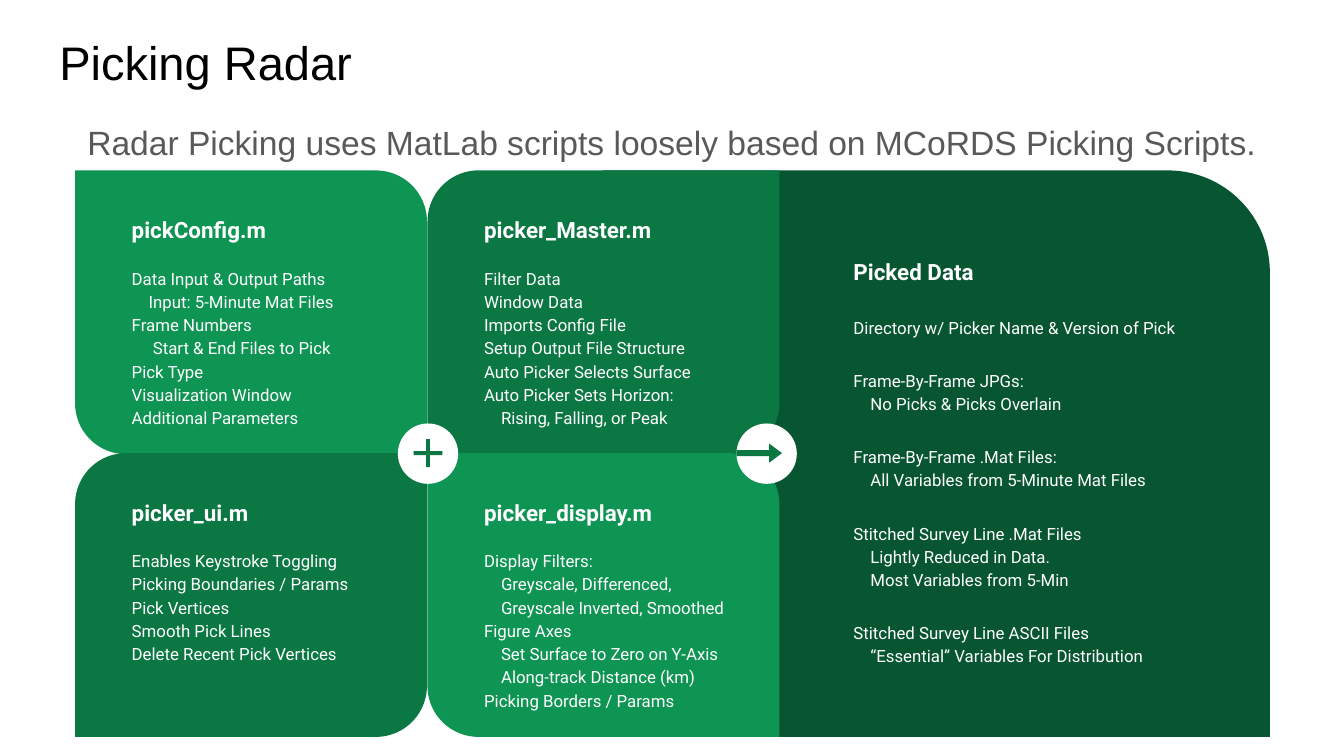
from pptx import Presentation
from pptx.dml.color import RGBColor
from pptx.enum.shapes import MSO_SHAPE
from pptx.enum.text import MSO_ANCHOR, MSO_AUTO_SIZE, PP_ALIGN
from pptx.util import Cm, Pt

WHITE = RGBColor(0xFF, 0xFF, 0xFF)
BLACK = RGBColor(0x00, 0x00, 0x00)
GREY = RGBColor(0x59, 0x59, 0x59)
LIGHT_GREEN = RGBColor(0x0E, 0x94, 0x53)
MID_GREEN = RGBColor(0x0B, 0x77, 0x43)
DARK_GREEN = RGBColor(0x08, 0x56, 0x31)

GRID_LEFT, GRID_TOP = 1.42, 3.22
CELL_WIDTH, CELL_HEIGHT = 6.65, 5.36
COLUMN_PITCH, ROW_PITCH = 6.66, 5.34
TEXT_INSET = 0.82
CORNER = 0.18
INDENT = 0.32
BADGE = 1.14

SCRIPTS = [
    (1, 0, "picker_Master.m", [
        (0, "Filter Data"),
        (0, "Window Data"),
        (0, "Imports Config File"),
        (0, "Setup Output File Structure"),
        (0, "Auto Picker Selects Surface"),
        (0, "Auto Picker Sets Horizon:"),
        (1, "Rising, Falling, or Peak"),
    ]),
    (0, 0, "pickConfig.m", [
        (0, "Data Input & Output Paths"),
        (1, "Input: 5-Minute Mat Files"),
        (0, "Frame Numbers"),
        (1.25, "Start & End Files to Pick"),
        (0, "Pick Type"),
        (0, "Visualization Window"),
        (0, "Additional Parameters"),
    ]),
    (0, 1, "picker_ui.m", [
        (0, "Enables Keystroke Toggling"),
        (0, "Picking Boundaries / Params"),
        (0, "Pick Vertices"),
        (0, "Smooth Pick Lines"),
        (0, "Delete Recent Pick Vertices"),
    ]),
    (1, 1, "picker_display.m", [
        (0, "Display Filters:"),
        (1, "Greyscale, Differenced,"),
        (1, "Greyscale Inverted, Smoothed"),
        (0, "Figure Axes"),
        (1, "Set Surface to Zero on Y-Axis"),
        (1, "Along-track Distance (km)"),
        (0, "Picking Borders / Params"),
    ]),
]

OUTPUTS = [
    (0, "Directory w/ Picker Name & Version of Pick"),
    (0, "Frame-By-Frame JPGs:"),
    (1, "No Picks & Picks Overlain"),
    (0, "Frame-By-Frame .Mat Files:"),
    (1, "All Variables from 5-Minute Mat Files"),
    (0, "Stitched Survey Line .Mat Files"),
    (1, "Lightly Reduced in Data."),
    (1, "Most Variables from 5-Min"),
    (0, "Stitched Survey Line ASCII Files"),
    (1, "“Essential” Variables For Distribution"),
]


class SlideBuilder:
    font_name = "Roboto"
    heading_size = 12
    list_size = 9
    line_spacing = 1.15
    margin = Cm(0.25)

    def __init__(self, slide):
        self.slide = slide

    def frame(self, shape):
        text_frame = shape.text_frame
        text_frame.word_wrap = True
        text_frame.auto_size = MSO_AUTO_SIZE.NONE
        text_frame.vertical_anchor = MSO_ANCHOR.TOP
        text_frame.margin_left = text_frame.margin_right = self.margin
        text_frame.margin_top = text_frame.margin_bottom = self.margin
        return text_frame

    def style_text(self, paragraph, text, size, color, name, bold=False, indent=0):
        paragraph.text = text
        paragraph.alignment = PP_ALIGN.LEFT
        paragraph.space_before = Pt(0)
        paragraph.font.size = Pt(size)
        paragraph.font.name = name
        paragraph.font.bold = bold
        paragraph.font.color.rgb = color
        properties = paragraph._p.get_or_add_pPr()
        properties.set("marL", str(Cm(indent)))
        properties.set("indent", "0")

    def placeholder(self, index, top, text, size, color, indent=0):
        shape = self.slide.placeholders[index]
        shape.left, shape.top = Cm(0.87), Cm(top)
        shape.width, shape.height = Cm(23.67), Cm(1.6)
        paragraph = self.frame(shape).paragraphs[0]
        self.style_text(paragraph, text, size, color, "Arial", indent=indent)
        return paragraph

    def shape(self, kind, left, top, width, height, color, adjustments=()):
        shape = self.slide.shapes.add_shape(
            kind, Cm(left), Cm(top), Cm(width), Cm(height))
        shape.shadow.inherit = False
        shape.fill.solid()
        shape.fill.fore_color.rgb = color
        shape.line.fill.background()
        for position, value in enumerate(adjustments):
            shape.adjustments[position] = value

    def text_box(self, left, top, width, height):
        return self.frame(self.slide.shapes.add_textbox(
            Cm(left), Cm(top), Cm(width), Cm(height)))

    def heading(self, left, top, width, text):
        paragraph = self.text_box(left, top, width, 1.57).paragraphs[0]
        self.style_text(paragraph, text, self.heading_size, WHITE, self.font_name, bold=True)

    def listing(self, left, top, width, height, lines, gap=0):
        text_frame = self.text_box(left, top, width, height)
        for number, (level, text) in enumerate(lines):
            paragraph = text_frame.add_paragraph() if number else text_frame.paragraphs[0]
            self.style_text(paragraph, text, self.list_size, WHITE, self.font_name,
                            indent=level * INDENT)
            paragraph.line_spacing = self.line_spacing
            if number and level == 0:
                paragraph.space_before = Pt(gap)

    def script_panel(self, column, row, name, lines):
        left = GRID_LEFT + column * COLUMN_PITCH
        top = GRID_TOP + row * ROW_PITCH
        if column == row:
            color, corners = LIGHT_GREEN, (0, CORNER)
        else:
            color, corners = MID_GREEN, (CORNER, 0)
        self.shape(MSO_SHAPE.ROUND_2_DIAG_RECTANGLE, left, top,
                   CELL_WIDTH, CELL_HEIGHT, color, corners)
        self.heading(left + TEXT_INSET, top + 0.61, 4.98, name)
        self.listing(left + TEXT_INSET, top + 1.54, 5.46, 3.4, lines)

    def badge(self, left):
        self.shape(MSO_SHAPE.OVAL, left, 8, BADGE, BADGE, WHITE)


def main():
    presentation = Presentation()
    presentation.slide_width, presentation.slide_height = Cm(25.4), Cm(14.28)
    builder = SlideBuilder(presentation.slides.add_slide(presentation.slide_layouts[1]))

    builder.placeholder(0, 0.38, "Picking Radar", 25.2, BLACK)
    subtitle = builder.placeholder(
        1, 1.93, "Radar Picking uses MatLab scripts loosely based on MCoRDS Picking Scripts.",
        18, GREY, indent=0.53)
    subtitle.line_spacing = builder.line_spacing
    subtitle.space_after = Pt(12)
    subtitle_properties = subtitle._p.get_or_add_pPr()
    subtitle_properties.insert_element_before(
        subtitle_properties.makeelement(
            "{http://schemas.openxmlformats.org/drawingml/2006/main}buNone", {}),
        "a:tabLst", "a:defRPr", "a:extLst")

    builder.shape(MSO_SHAPE.ROUND_2_DIAG_RECTANGLE, 11.4, GRID_TOP, 12.6, 10.7,
                  DARK_GREEN, (0, CORNER))
    builder.heading(15.88, 4.62, 6.93, "Picked Data")
    builder.listing(15.88, 5.69, 6.93, 7.11, OUTPUTS, gap=16)

    for script in SCRIPTS:
        builder.script_panel(*script)

    builder.badge(7.52)
    builder.shape(MSO_SHAPE.MATH_PLUS, 7.72, 8.2, 0.74, 0.72, MID_GREEN, (0.1,))
    builder.badge(13.92)
    builder.shape(MSO_SHAPE.RIGHT_ARROW, 13.92, 8.38, 0.86, 0.36, MID_GREEN, (0.32, 0.67))

    presentation.save("out.pptx")


if __name__ == "__main__":
    main()
